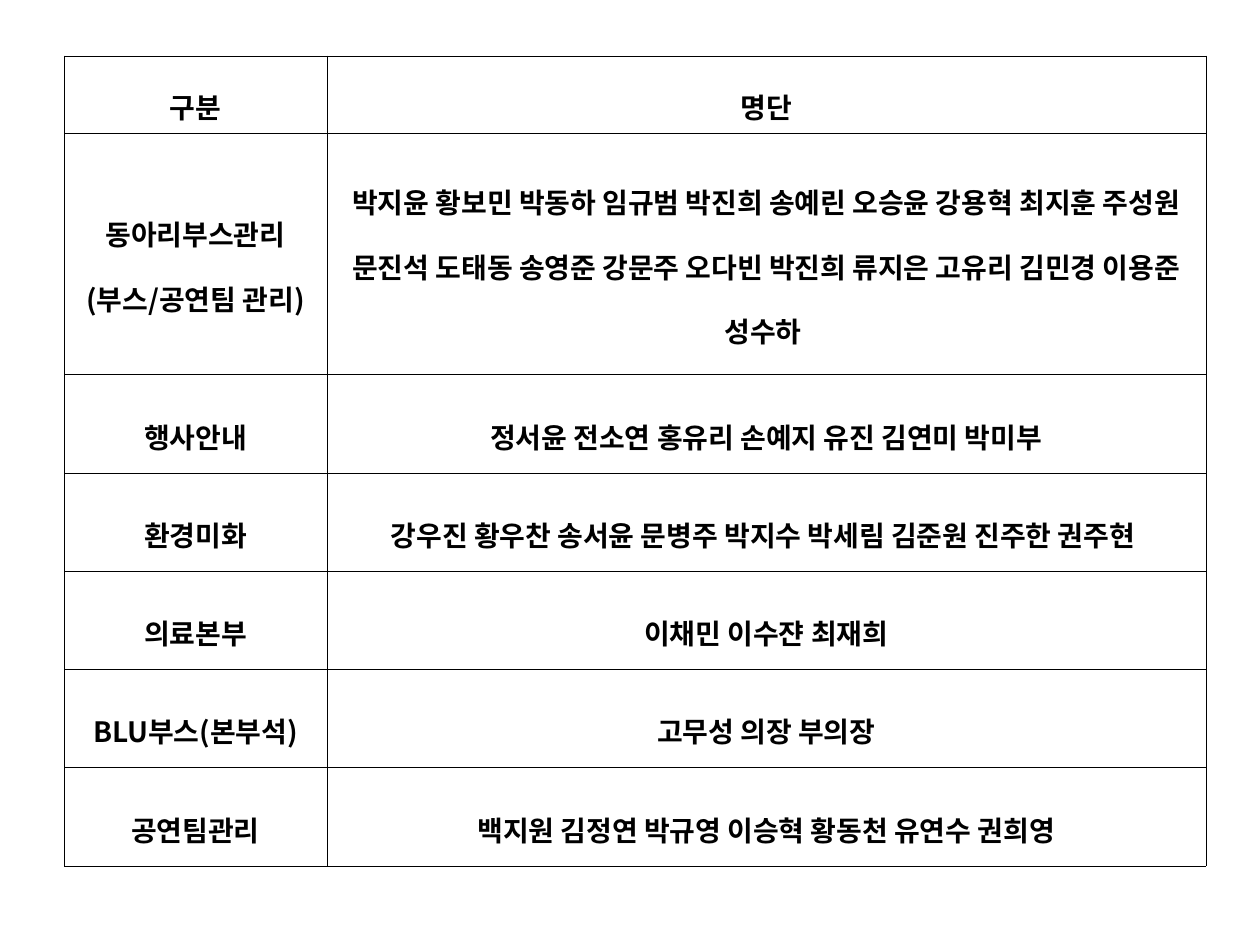
from dataclasses import dataclass

from lxml import etree
from pptx import Presentation, util as u
from pptx.dml.color import RGBColor
from pptx.enum import text
from pptx.oxml import ns


@dataclass(frozen=True)
class Theme:
    font: str = "Noto Sans CJK KR"
    ink: str = "000000"
    size: float = 16
    line_spacing: float = 1.6
    border: float = 0.28


THEME = Theme()
WIDTH, HEIGHT = u.Inches(10), u.Inches(7.5)
ROSTER_BOX = (0.051, 0.059, 0.906, 0.84)
COLUMN_SHARES = (0.23, 0.77)
ROW_UNIT = 0.104
ROW_UNITS = (0.5, 2.46, 1, 1, 1, 1, 1)
ROSTER = [
    ("구분", "명단"),
    (
        "동아리부스관리\n(부스/공연팀 관리)",
        "박지윤 황보민 박동하 임규범 박진희 송예린 오승윤 강용혁 최지훈 주성원 "
        "문진석 도태동 송영준 강문주 오다빈 박진희 류지은 고유리 김민경 이용준 성수하 ",
    ),
    ("행사안내", "정서윤 전소연 홍유리 손예지 유진 김연미 박미부"),
    ("환경미화", "강우진 황우찬 송서윤 문병주 박지수 박세림 김준원 진주한 권주현 "),
    ("의료본부", "이채민 이수쟌 최재희"),
    ("BLU부스(본부석)", "고무성 의장 부의장"),
    ("공연팀관리", "백지원 김정연 박규영 이승혁 황동천 유연수 권희영"),
]


def add_borders(cell):
    properties = cell._tc.get_or_add_tcPr()
    for index, side in enumerate(("lnL", "lnR", "lnT", "lnB")):
        line = etree.Element(ns.qn(f"a:{side}"), w=str(u.Pt(THEME.border)))
        fill = etree.SubElement(line, ns.qn("a:solidFill"))
        etree.SubElement(fill, ns.qn("a:srgbClr"), val=THEME.ink)
        properties.insert(index, line)


def format_paragraph(paragraph):
    paragraph.alignment = text.PP_ALIGN.CENTER
    paragraph.line_spacing = THEME.line_spacing
    font = paragraph.font
    font.name = THEME.font
    font.size = u.Pt(THEME.size)
    font.bold = True
    font.color.rgb = RGBColor.from_string(THEME.ink)
    latin = font._element.find(ns.qn("a:latin"))
    latin.addnext(etree.Element(ns.qn("a:ea"), typeface=THEME.font))


def fill_cell(cell, wording):
    cell.text = wording
    cell.vertical_anchor = text.MSO_ANCHOR.MIDDLE
    cell.fill.background()
    add_borders(cell)
    for paragraph in cell.text_frame.paragraphs:
        format_paragraph(paragraph)


def add_roster(slide, box):
    left, top, width, height = box
    frame = slide.shapes.add_table(
        len(ROSTER), len(COLUMN_SHARES),
        int(left * WIDTH), int(top * HEIGHT), int(width * WIDTH), int(height * HEIGHT),
    )
    table = frame.table
    table.first_row = table.horz_banding = False
    for column, share in zip(table.columns, COLUMN_SHARES):
        column.width = int(share * width * WIDTH)
    for row, units in zip(table.rows, ROW_UNITS):
        row.height = int(units * ROW_UNIT * HEIGHT)
    for row, wordings in zip(table.rows, ROSTER):
        for cell, wording in zip(row.cells, wordings):
            fill_cell(cell, wording)


def main():
    presentation = Presentation()
    presentation.slide_width, presentation.slide_height = WIDTH, HEIGHT
    slide = presentation.slides.add_slide(presentation.slide_layouts[6])
    add_roster(slide, ROSTER_BOX)
    presentation.save("out.pptx")


if __name__ == "__main__":
    main()
